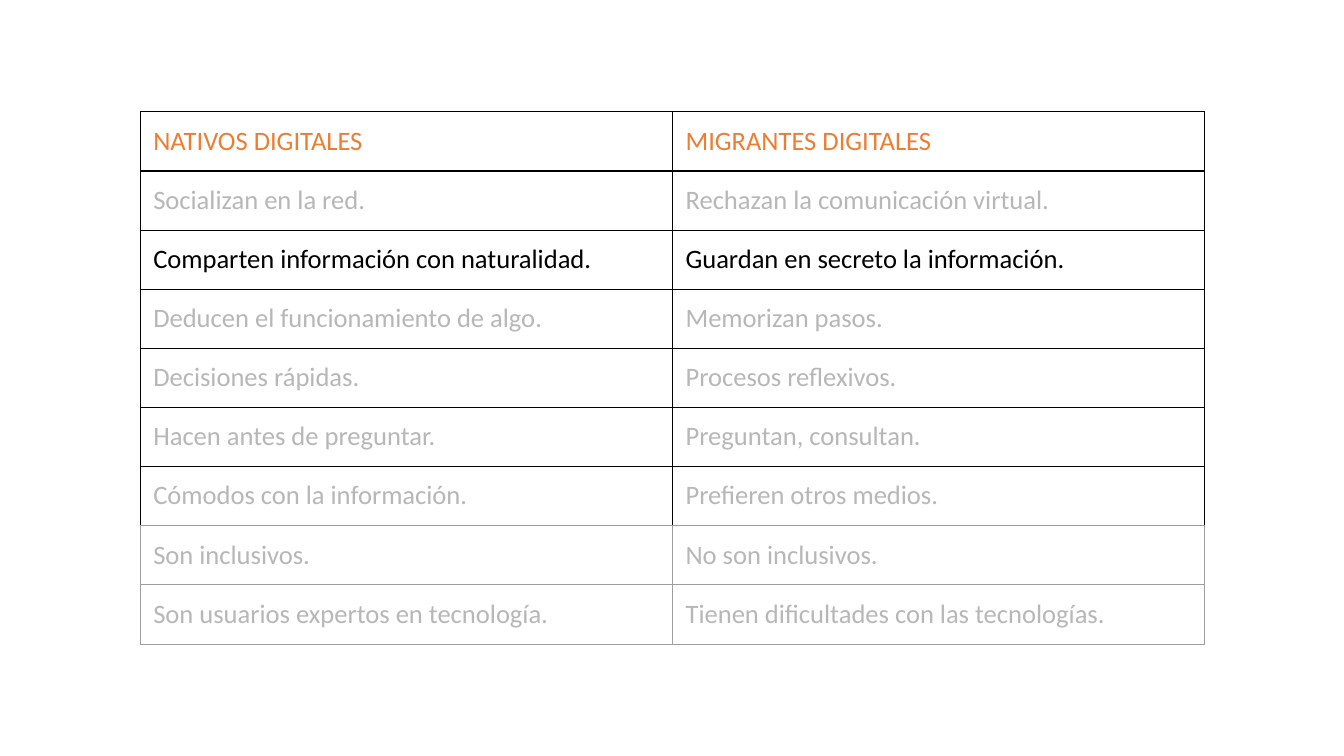
from dataclasses import dataclass

from lxml import etree
from pptx import Presentation
from pptx.dml.color import RGBColor
from pptx.enum.text import MSO_ANCHOR
from pptx.oxml.ns import qn
from pptx.util import Inches, Pt

TOP = MSO_ANCHOR.TOP


@dataclass(frozen=True)
class Theme:
    font: str = "Calibri"
    size: float = 19
    heading: str = "ED7D31"
    muted: str = "B7B7B7"
    active: str = "000000"
    strong_line: tuple = ("000000", 1)
    light_line: tuple = ("9E9E9E", 0.75)


THEME = Theme()
SLIDE_WIDTH, SLIDE_HEIGHT = 13.33, 7.5
TABLE_LEFT, TABLE_TOP = 1.39, 1.11
TABLE_WIDTH, TABLE_HEIGHT = 10.56, 5.28
CELL_MARGIN = 0.13
ACTIVE_ROW = 2
FIRST_LIGHT_ROW = 7
COMPARISON = [
    ("NATIVOS DIGITALES", "MIGRANTES DIGITALES"),
    ("Socializan en la red.", "Rechazan la comunicación virtual."),
    ("Comparten información con naturalidad.", "Guardan en secreto la información."),
    ("Deducen el funcionamiento de algo.", "Memorizan pasos."),
    ("Decisiones rápidas.", "Procesos reflexivos."),
    ("Hacen antes de preguntar.", "Preguntan, consultan."),
    ("Cómodos con la información.", "Prefieren otros medios."),
    ("Son inclusivos.", "No son inclusivos."),
    ("Son usuarios expertos en tecnología.", "Tienen dificultades con las tecnologías."),
]


def text_color(row):
    return {0: THEME.heading, ACTIVE_ROW: THEME.active}.get(row, THEME.muted)


def cell_lines(row):
    """Line of each side; the strong grid ends where the light rows begin."""
    side = THEME.light_line if row >= FIRST_LIGHT_ROW else THEME.strong_line
    bottom = THEME.light_line if row >= FIRST_LIGHT_ROW - 1 else THEME.strong_line
    return {"a:lnL": side, "a:lnR": side, "a:lnT": side, "a:lnB": bottom}


def draw_borders(cell, lines):
    properties = cell._tc.get_or_add_tcPr()
    for side, (color, width) in lines.items():
        line = etree.SubElement(properties, qn(side), w=str(Pt(width)))
        fill = etree.SubElement(line, qn("a:solidFill"))
        etree.SubElement(fill, qn("a:srgbClr"), val=color)


def write_cell(cell, text, color):
    cell.margin_left = cell.margin_right = Inches(CELL_MARGIN)
    cell.margin_top = cell.margin_bottom = Inches(CELL_MARGIN)
    cell.vertical_anchor = TOP
    span = cell.text_frame.paragraphs[0].add_run()
    span.text = text
    span.font.name = THEME.font
    span.font.size = Pt(THEME.size)
    span.font.bold = False
    span.font.color.rgb = RGBColor.from_string(color)


def add_comparison(page, rows):
    frame = page.shapes.add_table(
        len(rows), len(rows[0]), Inches(TABLE_LEFT), Inches(TABLE_TOP),
        Inches(TABLE_WIDTH), Inches(TABLE_HEIGHT))
    table = frame.table
    table.first_row = table.horz_banding = False
    for row, texts in enumerate(rows):
        for column, text in enumerate(texts):
            cell = table.cell(row, column)
            write_cell(cell, text, text_color(row))
            draw_borders(cell, cell_lines(row))
            cell.fill.background()


def main():
    deck = Presentation()
    deck.slide_width, deck.slide_height = Inches(SLIDE_WIDTH), Inches(SLIDE_HEIGHT)
    page = deck.slides.add_slide(deck.slide_layouts[6])
    add_comparison(page, COMPARISON)
    deck.save("out.pptx")


if __name__ == "__main__":
    main()
